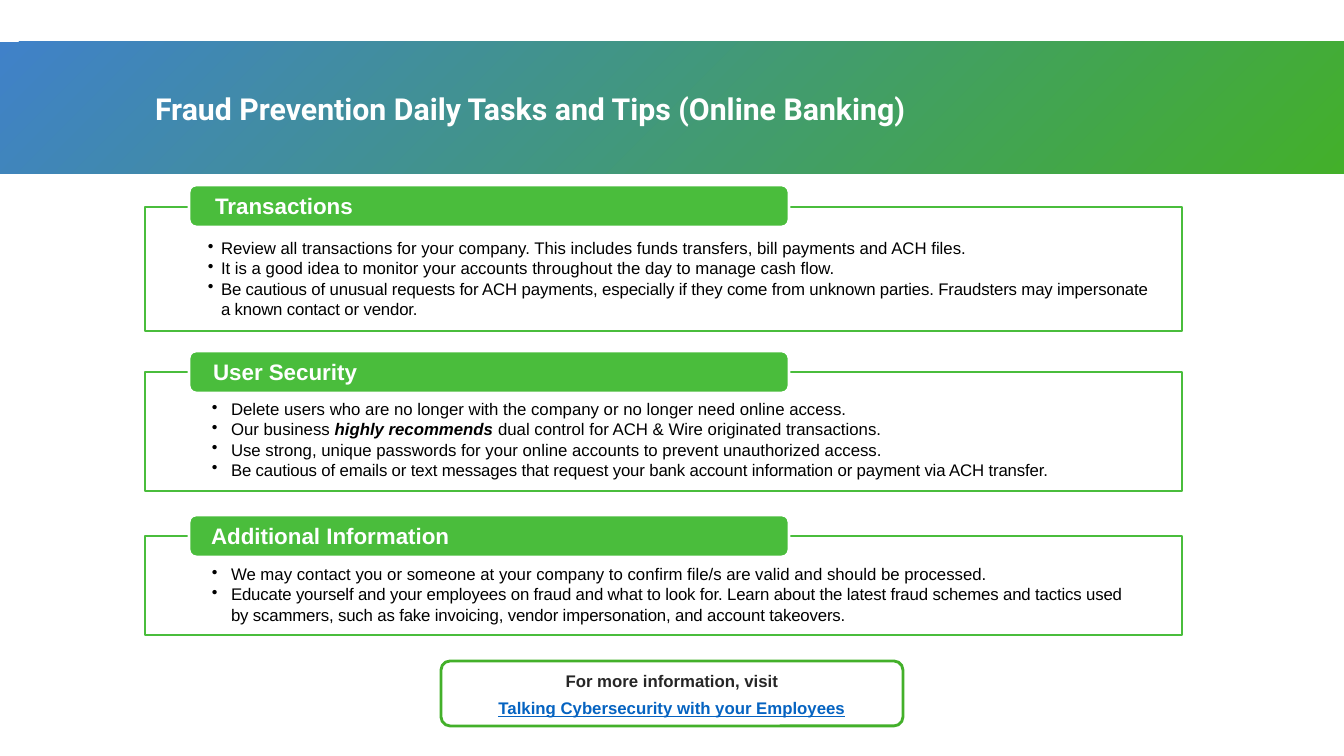
import pptx
import pptx.dml.color
import pptx.enum.shapes
import pptx.enum.text
import pptx.util
from lxml import etree

RGB = pptx.dml.color.RGBColor
BLUE = RGB(0x40, 0x81, 0xC9)
LEAF = RGB(0x43, 0xB0, 0x2A)
GREEN = RGB(0x4A, 0xBD, 0x3C)
WHITE = RGB(0xFF, 0xFF, 0xFF)
BLACK = RGB(0, 0, 0)
GREY = RGB(0x26, 0x26, 0x26)
LINK = RGB(0x05, 0x63, 0xC1)

Pt = pptx.util.Pt
SHAPE = pptx.enum.shapes.MSO_SHAPE
ALIGN = pptx.enum.text.PP_ALIGN
MIDDLE = pptx.enum.text.MSO_ANCHOR.MIDDLE
SCALE = 914400 / 100.8

# Heading, heading inset, tab top, frame top and height,
# list left, top and width, hanging indent, items
PARTS = [
    ("Transactions", 24, 185, 207, 124, 208, 238, 952, 13, [
        ["Review all transactions for your company. This includes funds "
         "transfers, bill payments and ACH files."],
        ["It is a good idea to monitor your accounts throughout the day "
         "to manage cash flow."],
        ["Be cautious of unusual requests for ACH payments, especially if "
         "they come from unknown parties. Fraudsters may impersonate a "
         "known contact or vendor."]]),
    ("User Security", 22, 351, 372, 119, 212, 399, 920, 19, [
        ["Delete users who are no longer with the company or no longer "
         "need online access."],
        ["Our business ", "highly recommends ",
         "dual control for ACH & Wire originated transactions."],
        ["Use strong, unique passwords for your online accounts to prevent "
         "unauthorized access."],
        ["Be cautious of emails or text messages that request your bank "
         "account information or payment via ACH transfer."]]),
    ("Additional Information", 20, 515, 536, 99, 212, 564, 920, 19, [
        ["We may contact you or someone at your company to confirm file/s "
         "are valid and should be processed."],
        ["Educate yourself and your employees on fraud and what to look "
         "for. Learn about the latest fraud schemes and tactics used by "
         "scammers, such as fake invoicing, vendor impersonation, and "
         "account takeovers."]]),
]


def px(n):
    return pptx.util.Emu(round(n * SCALE))


def style(font, size, color, bold=False, name="Arial"):
    font.name, font.size, font.bold = name, Pt(size), bold
    font.color.rgb = color


def pad(frame, left=0):
    frame.margin_left = px(left)
    frame.margin_top = frame.margin_right = frame.margin_bottom = 0
    frame.word_wrap = True


def block(slide, kind, box, fill=None, line=None, round_by=None):
    shape = slide.shapes.add_shape(kind, *map(px, box))
    shape.shadow.inherit = False
    if fill is None:
        shape.fill.background()
    else:
        shape.fill.solid()
        shape.fill.fore_color.rgb = fill
    if line is None:
        shape.line.fill.background()
    else:
        shape.line.color.rgb = line
        shape.line.width = Pt(2.04)
    if round_by is not None:
        shape.adjustments[0] = round_by
    return shape


def banner(slide):
    band = block(slide, SHAPE.RECTANGLE, (0, 42, 1344, 132))
    band.fill.gradient()
    band.fill.gradient_angle = 315
    for stop, color in zip(band.fill.gradient_stops, (BLUE, LEAF)):
        stop.color.rgb = color


def title(slide, text):
    head = slide.shapes.title
    head.left, head.top, head.width, head.height = map(px, (145, 78, 887, 60))
    frame = head.text_frame
    pad(frame, 10)
    frame.vertical_anchor = MIDDLE
    frame.text = text
    para = frame.paragraphs[0]
    para.alignment = ALIGN.LEFT
    style(para.font, 21.6, WHITE, True, "Roboto")
    # Draw the title above the banner
    tree = slide.shapes._spTree
    tree.remove(head._element)
    tree.append(head._element)


def tab(slide, text, inset, top):
    shape = block(slide, SHAPE.ROUNDED_RECTANGLE, (189, top, 600, 42),
                  GREEN, WHITE, 0.17)
    frame = shape.text_frame
    pad(frame, inset)
    frame.vertical_anchor = MIDDLE
    frame.text = text
    para = frame.paragraphs[0]
    para.alignment = ALIGN.LEFT
    style(para.font, 16, WHITE, True)


def bullet(para, hang):
    props = para._p.get_or_add_pPr()
    props.set("marL", str(px(hang)))
    props.set("indent", str(-px(hang)))
    tag = "{http://schemas.openxmlformats.org/drawingml/2006/main}buChar"
    etree.SubElement(props, tag).set("char", "•")


def points(slide, box, hang, items):
    """Add a bulleted list; the second run of an item is stressed."""
    frame = slide.shapes.add_textbox(*map(px, box)).text_frame
    pad(frame)
    for i, parts in enumerate(items):
        para = frame.add_paragraph() if i else frame.paragraphs[0]
        bullet(para, hang)
        style(para.font, 12, BLACK)
        for j, text in enumerate(parts):
            run = para.add_run()
            run.text = text
            if j == 1:
                run.font.bold = run.font.italic = True
            if i == len(items) - 1:
                run._r.get_or_add_rPr().set("spc", "-10")


def footer(slide):
    shape = block(slide, SHAPE.ROUNDED_RECTANGLE, (441, 661, 462, 65),
                  line=LEAF, round_by=0.14)
    frame = shape.text_frame
    pad(frame)
    frame.vertical_anchor = MIDDLE
    frame.text = ("For more information, visit\n"
                  "Talking Cybersecurity with your Employees")
    for para, color in zip(frame.paragraphs, (GREY, LINK)):
        para.alignment = ALIGN.CENTER
        para.line_spacing = Pt(16.2)
        style(para.font, 12, color, True)
    para.space_before = Pt(3)
    para.font.underline = True


def main():
    deck = pptx.Presentation()
    deck.slide_width, deck.slide_height = px(1344), px(756)
    slide = deck.slides.add_slide(deck.slide_layouts[5])
    banner(slide)
    title(slide, "Fraud Prevention Daily Tasks and Tips (Online Banking)")
    for head, inset, top, edge, tall, left, start, wide, hang, items in PARTS:
        block(slide, SHAPE.RECTANGLE, (145, edge, 1037, tall), line=GREEN)
        tab(slide, head, inset, top)
        box = left, start, wide, edge + tall - start - 8
        points(slide, box, hang, items)
    footer(slide)
    deck.save("out.pptx")


if __name__ == "__main__":
    main()
